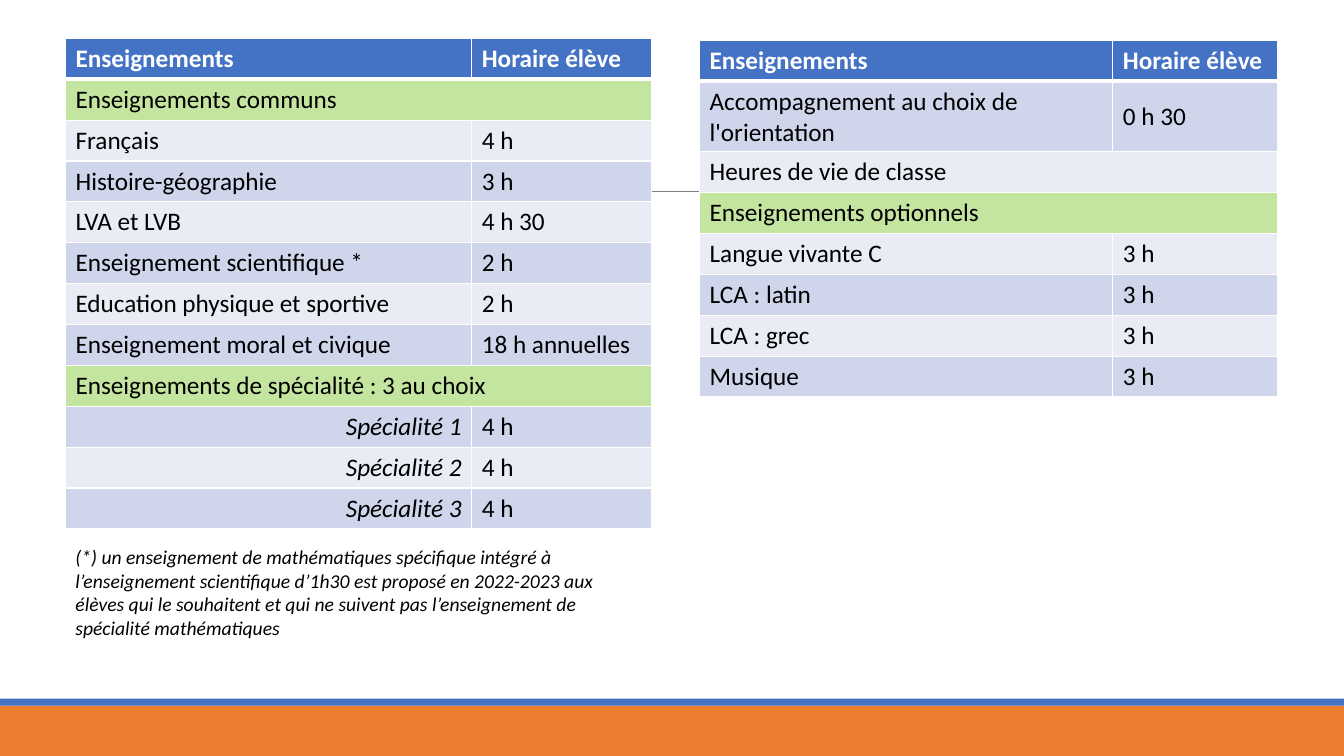
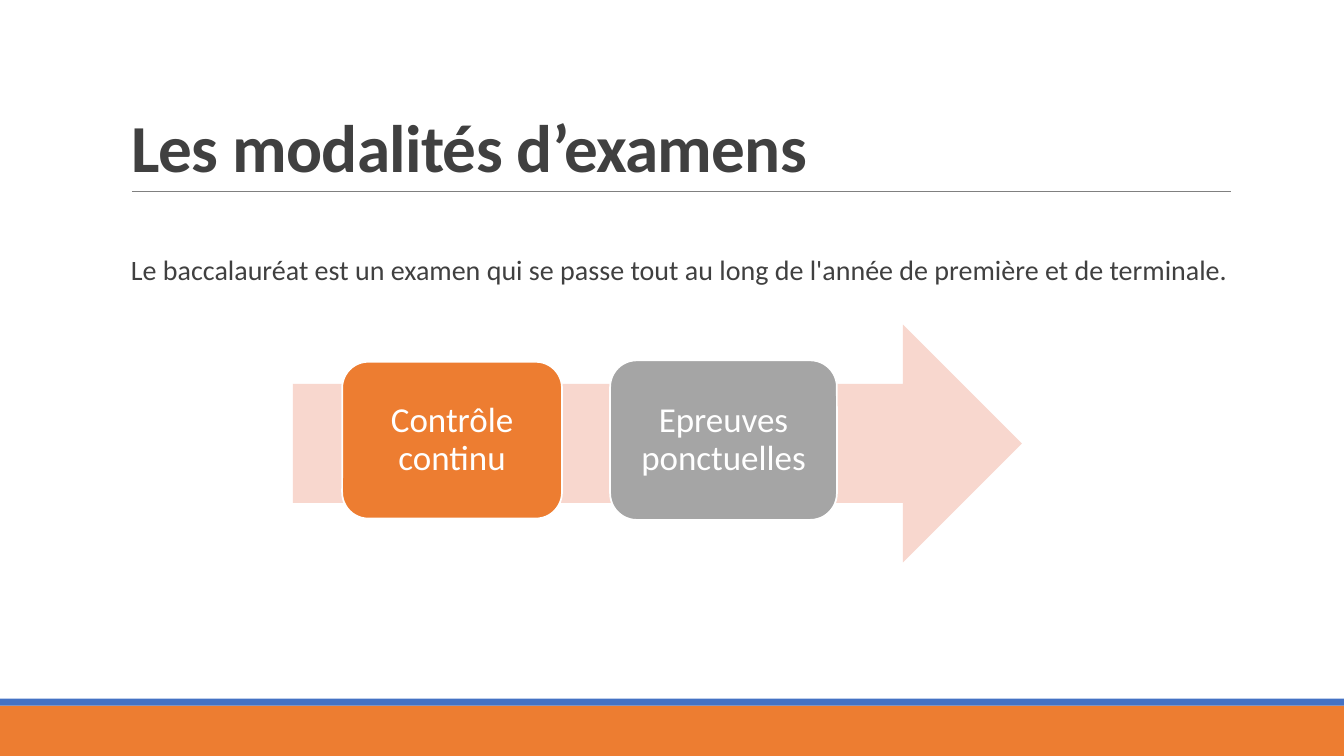
from dataclasses import dataclass

from lxml.etree import SubElement
from pptx import Presentation
from pptx.dml.color import RGBColor
from pptx.enum.shapes import MSO_CONNECTOR, MSO_SHAPE
from pptx.enum.text import MSO_ANCHOR, MSO_AUTO_SIZE, PP_ALIGN
from pptx.oxml import parse_xml
from pptx.oxml.ns import nsdecls, qn
from pptx.util import Pt

WHITE = RGBColor(0xFF, 0xFF, 0xFF)
BLACK = RGBColor(0x00, 0x00, 0x00)
DARK_GREY = RGBColor(0x40, 0x40, 0x40)
RULE_GREY = RGBColor(0x80, 0x80, 0x80)
GREY = RGBColor(0xA5, 0xA5, 0xA5)
BLUE = RGBColor(0x44, 0x72, 0xC4)
ORANGE = RGBColor(0xED, 0x7D, 0x31)
PEACH = RGBColor(0xF8, 0xD7, 0xCE)
GREEN = RGBColor(0xC4, 0xE5, 0x9F)
ROW_TINTS = (RGBColor(0xE9, 0xEB, 0xF5), RGBColor(0xCF, 0xD5, 0xEA))

FONT = "Calibri"
WIDTH, HEIGHT = 960, 540
TITLE_ONLY, BLANK = 5, 6
ROW_HEIGHT = 29.2


@dataclass
class Row:
    """A timetable line; without hours its label spans both columns."""
    label: str
    hours: str = ""
    section: bool = False
    choice: bool = False


HEADER = Row("Enseignements", "Horaire élève")
COMMON_ROWS = [
    HEADER,
    Row("Enseignements communs", section=True),
    Row("Français", "4 h"),
    Row("Histoire-géographie", "3 h"),
    Row("LVA et LVB", "4 h 30"),
    Row("Enseignement scientifique *", "2 h"),
    Row("Education physique et sportive", "2 h"),
    Row("Enseignement moral et civique", "18 h annuelles"),
    Row("Enseignements de spécialité : 3 au choix", section=True),
    *(Row(f"Spécialité {number}", "4 h", choice=True) for number in (1, 2, 3)),
]
OPTION_ROWS = [
    HEADER,
    Row("Accompagnement au choix de l'orientation", "0 h 30"),
    Row("Heures de vie de classe"),
    Row("Enseignements optionnels", section=True),
    *(Row(label, "3 h") for label in
      ("Langue vivante C", "LCA : latin", "LCA : grec", "Musique")),
]


class Deck:
    def __init__(self):
        self.presentation = Presentation()
        self.presentation.slide_width = Pt(WIDTH)
        self.presentation.slide_height = Pt(HEIGHT)
        self.page = None

    def add_page(self, title=None):
        """Start a slide with the shared bands and rule, and a title if given."""
        layout = self.presentation.slide_layouts[TITLE_ONLY if title else BLANK]
        self.page = self.presentation.slides.add_slide(layout)
        self.shape(MSO_SHAPE.RECTANGLE, 0, 504, WIDTH, 36, ORANGE)
        self.shape(MSO_SHAPE.RECTANGLE, 0, 499, WIDTH, 5, BLUE)
        self.rule(94.3, 136.8, 879.1)
        if title:
            self.title(title)

    def style(self, para, size, color, bold=False, italic=False,
              align=PP_ALIGN.LEFT, spacing=None):
        para.alignment = align
        para.line_spacing = spacing
        font = para.font
        font.name, font.size = FONT, Pt(size)
        font.bold, font.italic = bold, italic
        font.color.rgb = color

    def title(self, text):
        box = self.page.shapes.title
        box.left, box.top, box.width, box.height = (
            Pt(86.4), Pt(22.3), Pt(792), Pt(114.5))
        frame = box.text_frame
        frame.text = text
        frame.auto_size = MSO_AUTO_SIZE.NONE
        frame.vertical_anchor = MSO_ANCHOR.BOTTOM
        para = frame.paragraphs[0]
        self.style(para, 48, DARK_GREY, bold=True, spacing=0.85)
        para.runs[0].font._element.set("spc", "-50")

    def shape(self, kind, left, top, width, height, fill, outline=None):
        shape = self.page.shapes.add_shape(
            kind, Pt(left), Pt(top), Pt(width), Pt(height))
        shape.shadow.inherit = False
        shape.fill.solid()
        shape.fill.fore_color.rgb = fill
        if outline is None:
            shape.line.fill.background()
        else:
            shape.line.color.rgb = outline
            shape.line.width = Pt(1.25)
        return shape

    def rule(self, left, top, right):
        line = self.page.shapes.add_connector(
            MSO_CONNECTOR.STRAIGHT, Pt(left), Pt(top), Pt(right), Pt(top))
        line.line.color.rgb = RULE_GREY
        line.line.width = Pt(0.5)
        SubElement(line._element.spPr, qn("a:effectLst"))

    def text(self, text, left, top, width, height, size, color,
             right_margin=7.2, **style):
        box = self.page.shapes.add_textbox(
            Pt(left), Pt(top), Pt(width), Pt(height))
        frame = box.text_frame
        frame.word_wrap = True
        frame.margin_right = Pt(right_margin)
        frame.text = text
        self.style(frame.paragraphs[0], size, color, **style)

    def step(self, text, left, top, width, height, fill):
        step = self.shape(MSO_SHAPE.ROUNDED_RECTANGLE, left, top, width, height,
                          fill, outline=WHITE)
        frame = step.text_frame
        frame.margin_left = frame.margin_right = Pt(7.2)
        frame.margin_top = frame.margin_bottom = Pt(7.2)
        frame.vertical_anchor = MSO_ANCHOR.MIDDLE
        frame.text = text
        self.style(frame.paragraphs[0], 25, WHITE, align=PP_ALIGN.CENTER,
                   spacing=0.9)

    def table(self, rows, left, top, widths):
        table = self.page.shapes.add_table(
            len(rows), len(widths), Pt(left), Pt(top),
            Pt(sum(widths)), Pt(ROW_HEIGHT * len(rows))).table
        for column, width in zip(table.columns, widths):
            column.width = Pt(width)
        for index, row in enumerate(rows):
            table.rows[index].height = Pt(ROW_HEIGHT)
            label, hours = table.cell(index, 0), table.cell(index, 1)
            is_header = index == 0
            fill = (BLUE if is_header else GREEN if row.section
                    else ROW_TINTS[index % 2])
            for cell, text in ((label, row.label), (hours, row.hours)):
                choice = row.choice and cell is label
                cell.text = text
                cell.vertical_anchor = MSO_ANCHOR.MIDDLE
                cell.fill.solid()
                cell.fill.fore_color.rgb = fill
                self.style(cell.text_frame.paragraphs[0], 18,
                           WHITE if is_header else BLACK, bold=is_header,
                           italic=choice,
                           align=PP_ALIGN.RIGHT if choice else PP_ALIGN.LEFT)
                self.borders(cell, above=3 if index == 1 else 1,
                             below=3 if is_header else 1)
            if not row.hours:
                label.merge(hours)

    def borders(self, cell, above, below):
        """Draw white borders; their elements must come before the fill."""
        properties = cell._tc.get_or_add_tcPr()
        sides = (("L", 1), ("R", 1), ("T", above), ("B", below))
        for position, (side, width) in enumerate(sides):
            properties.insert(position, parse_xml(
                f'<a:ln{side} {nsdecls("a")} w="{Pt(width)}"><a:solidFill>'
                f'<a:srgbClr val="{WHITE}"/></a:solidFill></a:ln{side}>'))


def add_timetable(deck):
    deck.add_page()
    deck.table(COMMON_ROWS, 46.8, 27.4, (290.2, 128.2))
    deck.text("(*) un enseignement de mathématiques spécifique intégré à "
              "l’enseignement scientifique d’1h30 est proposé en 2022-2023 aux "
              "élèves qui le souhaitent et qui ne suivent pas l’enseignement de "
              "spécialité mathématiques",
              46.8, 385.9, 418.4, 74.9, 14, BLACK, italic=True)
    deck.table(OPTION_ROWS, 499.7, 28.8, (295.2, 117.4))


def add_exams(deck):
    deck.add_page("Les modalités d’examens")
    deck.text("Le baccalauréat est un examen qui se passe tout au long de "
              "l'année de première et de terminale.",
              86.4, 179.3, 792, 283, 20, DARK_GREY, right_margin=0, spacing=0.9)
    deck.shape(MSO_SHAPE.RIGHT_ARROW, 209.3, 231.8, 520.6, 170, PEACH)
    deck.step("Contrôle continu", 244.4, 258.4, 157, 112, ORANGE)
    deck.step("Epreuves ponctuelles", 435.8, 257.4, 162, 114, GREY)


def main():
    deck = Deck()
    add_timetable(deck)
    add_exams(deck)
    deck.presentation.save("out.pptx")


if __name__ == "__main__":
    main()
